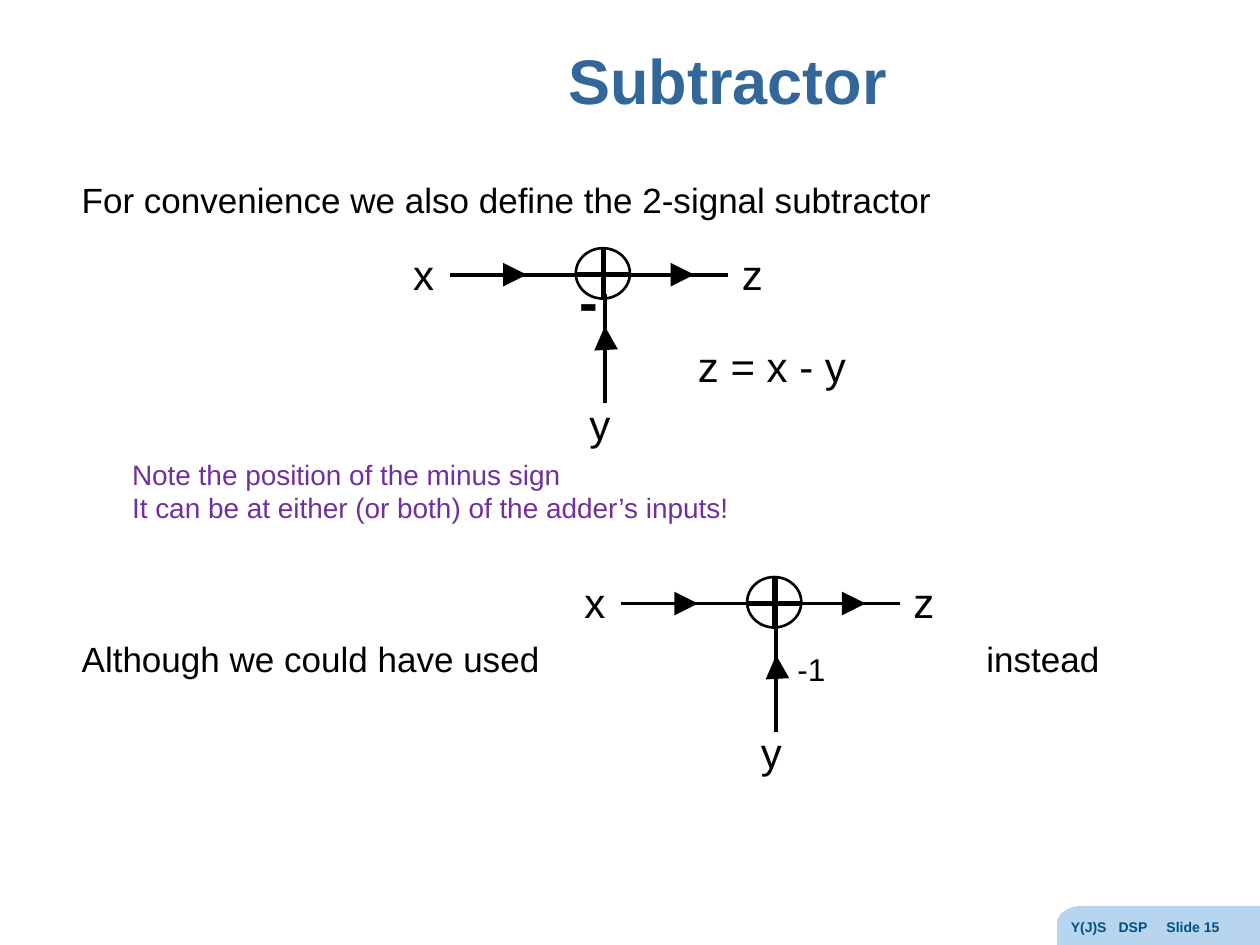
import dataclasses

import pptx
import pptx.dml.color
import pptx.enum.shapes
import pptx.enum.text
import pptx.oxml
import pptx.oxml.ns
import pptx.util

Inches = pptx.util.Inches
Pt = pptx.util.Pt


@dataclasses.dataclass(frozen=True)
class Theme:
    font: str = "Arial"
    ink: str = "000000"
    heading: str = "336699"
    note: str = "7030A0"
    tab_fill: str = "B7D5EF"
    tab_text: str = "005081"
    title_size: int = 36
    minus_size: int = 32
    symbol_size: int = 24
    body_size: int = 20
    gain_size: int = 18
    note_size: int = 16
    footer_size: int = 8
    outline: float = 1.5
    wire: float = 2.25
    plus: float = 3
    arrow: float = 4.5


def rgb(value):
    return pptx.dml.color.RGBColor.from_string(value)


class SlideBuilder:
    def __init__(self, presentation, theme):
        self.theme = theme
        self.slide = presentation.slides.add_slide(presentation.slide_layouts[5])
        self.shapes = self.slide.shapes

    def add_run(self, paragraph, text, size, color, bold=False):
        run = paragraph.add_run()
        run.text = text
        run.font.name = self.theme.font
        run.font.size = Pt(size)
        run.font.bold = bold
        run.font.color.rgb = rgb(color)

    def title(self, text, left, top, width, height):
        shape = self.slide.shapes.title
        shape.left, shape.top = Inches(left), Inches(top)
        shape.width, shape.height = Inches(width), Inches(height)
        frame = shape.text_frame
        frame.auto_size = pptx.enum.text.MSO_AUTO_SIZE.NONE
        frame.vertical_anchor = pptx.enum.text.MSO_ANCHOR.MIDDLE
        paragraph = frame.paragraphs[0]
        paragraph.alignment = pptx.enum.text.PP_ALIGN.CENTER
        paragraph.line_spacing = 0.9
        self.add_run(paragraph, text, self.theme.title_size, self.theme.heading, True)

    def text(self, lines, left, top, width, height, size, color=None, bold=False, tabs=()):
        """Add one paragraph per line; tabs are distances from the text edge in inches."""
        box = self.shapes.add_textbox(Inches(left), Inches(top), Inches(width), Inches(height))
        frame = box.text_frame
        frame.word_wrap = True
        for index, line in enumerate(lines):
            paragraph = frame.add_paragraph() if index else frame.paragraphs[0]
            self.add_run(paragraph, line, size, color or self.theme.ink, bold)
            if tabs:
                self.tab_stops(paragraph, tabs)

    def tab_stops(self, paragraph, positions):
        properties = paragraph._p.get_or_add_pPr()
        tab_list = pptx.oxml.parse_xml(f"<a:tabLst {pptx.oxml.ns.nsdecls('a')}/>")
        for position in positions:
            tab = tab_list.makeelement(pptx.oxml.ns.qn("a:tab"), {"pos": str(Inches(position)), "algn": "l"})
            tab_list.append(tab)
        properties.append(tab_list)

    def line(self, start, end, width, arrow=False):
        connector = self.shapes.add_connector(
            pptx.enum.shapes.MSO_CONNECTOR.STRAIGHT, *map(Inches, (*start, *end)))
        connector.line.color.rgb = rgb(self.theme.ink)
        connector.line.width = Pt(width)
        namespace = pptx.oxml.ns.nsdecls("a")
        if arrow:
            connector.line._get_or_add_ln().append(
                pptx.oxml.parse_xml(f'<a:tailEnd {namespace} type="triangle"/>'))
        connector._element.spPr.append(pptx.oxml.parse_xml(f"<a:effectLst {namespace}/>"))

    def circle(self, left, top, width, height):
        shape = self.shapes.add_shape(
            pptx.enum.shapes.MSO_SHAPE.OVAL, Inches(left), Inches(top), Inches(width), Inches(height))
        shape.shadow.inherit = False
        shape.fill.background()
        shape.line.color.rgb = rgb(self.theme.ink)
        shape.line.width = Pt(self.theme.outline)

    def outline(self, points, color):
        first, *rest = [(Inches(x), Inches(y)) for x, y in points]
        builder = self.shapes.build_freeform(*first)
        builder.add_line_segments(rest, close=True)
        shape = builder.convert_to_shape()
        shape.shadow.inherit = False
        shape.fill.solid()
        shape.fill.fore_color.rgb = rgb(color)
        shape.line.fill.background()

    def adder(self, x, y, extras):
        """Draw a grouped adder centred at (x, y); extras place text relative to it."""
        theme = self.theme
        self.shapes = self.slide.shapes.add_group_shape().shapes
        strokes = (
            ((-1.22, 0), (0.99, 0), theme.wire, False),
            ((-0.71, 0), (-0.61, 0), theme.arrow, True),
            ((0.63, 0), (0.72, 0), theme.arrow, True),
            ((0, -0.21), (0, 0.2), theme.plus, False),
            ((0.2, 0), (-0.22, 0), theme.plus, False),
            ((0.01, 1.02), (0.01, 0.15), theme.wire, False),
            ((0.02, 0.59), (0.01, 0.41), theme.arrow, True),
        )
        for (x1, y1), (x2, y2), width, arrow in strokes:
            self.line((x + x1, y + y1), (x + x2, y + y2), width, arrow)
        self.circle(x - 0.22, y - 0.21, 0.43, 0.4)
        symbols = (("x", -1.61, -0.26), ("z", 1, -0.26), ("y", -0.21, 0.93))
        for symbol, dx, dy in symbols:
            self.text([symbol], x + dx, y + dy, 0.46, 0.5, theme.symbol_size)
        for label, dx, dy, width, height, size, bold in extras:
            self.text([label], x + dx, y + dy, width, height, size, bold=bold)
        self.shapes = self.slide.shapes


def main():
    presentation = pptx.Presentation()
    presentation.slide_width, presentation.slide_height = Inches(10), Inches(7.5)
    theme = Theme()
    builder = SlideBuilder(presentation, theme)

    builder.outline(
        [(10, 7.19), (10, 7.5), (8.39, 7.5), (8.39, 7.3), (8.42, 7.25),
         (8.46, 7.22), (8.51, 7.2), (8.55, 7.19)], theme.tab_fill)
    builder.text(["Y(J)S\tDSP\tSlide 15"], 8.4, 7.24, 1.6, 0.26,
                 theme.footer_size, theme.tab_text, True, tabs=(0.38, 0.76))

    builder.title("Subtractor", 2.12, 0.18, 7.31, 0.97)
    builder.text(["For convenience we also define the 2-signal subtractor"],
                 0.55, 1.37, 9.17, 0.42, theme.body_size)
    builder.adder(4.79, 2.18, [
        ("-", -0.29, -0.11, 0.43, 0.63, theme.minus_size, True),
        ("z = x - y", 0.65, 0.47, 1.65, 0.5, theme.symbol_size, False),
    ])
    builder.text(["Note the position of the minus sign",
                  "It can be at either (or both) of the adder’s inputs!"],
                 0.95, 3.58, 5.45, 0.64, theme.note_size, theme.note)
    builder.text(["Although we could have used\tinstead"],
                 0.55, 5.01, 9.17, 0.42, theme.body_size, tabs=(7.18,))
    builder.adder(6.15, 4.79, [("-1", 0.08, 0.32, 0.5, 0.4, theme.gain_size, False)])

    presentation.save("out.pptx")


if __name__ == "__main__":
    main()
